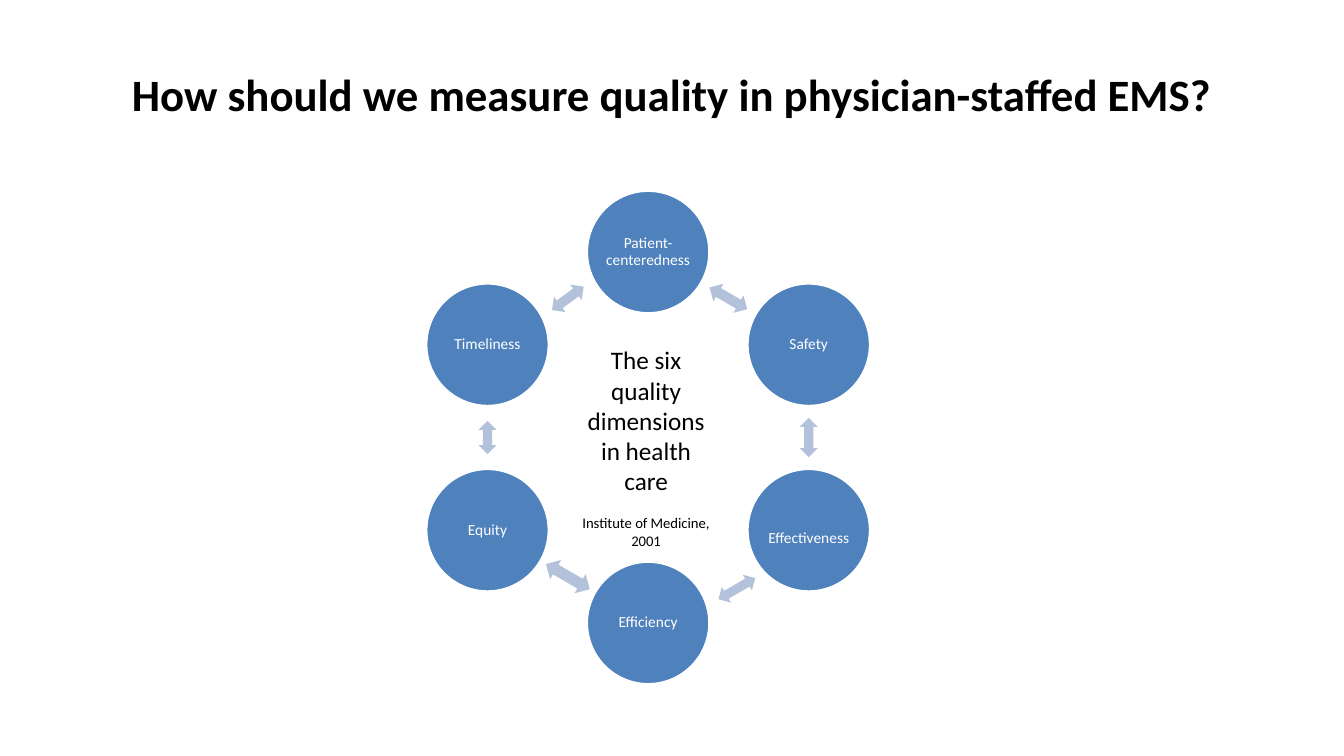
from math import cos, radians, sin

from pptx import Presentation
from pptx.dml.color import RGBColor
from pptx.enum.shapes import MSO_SHAPE
from pptx.enum.text import MSO_ANCHOR, PP_ALIGN
from pptx.util import Inches, Pt

CENTER = PP_ALIGN.CENTER
MIDDLE, TOP = MSO_ANCHOR.MIDDLE, MSO_ANCHOR.TOP
CIRCLE, ARROW = MSO_SHAPE.OVAL, MSO_SHAPE.LEFT_RIGHT_ARROW

THEME = {
    "font": "Calibri",
    "text": RGBColor(0, 0, 0),
    "light": RGBColor(255, 255, 255),
    "circle": RGBColor(0x4F, 0x81, 0xBD),
    "arrow": RGBColor(0xB3, 0xC1, 0xDB),
    "title_size": Pt(32),
    "center_size": Pt(18),
    "source_size": Pt(10.5),
    "label_size": Pt(11),
}

presentation = Presentation()
presentation.slide_width = Inches(40 / 3)
presentation.slide_height = Inches(7.5)
slide = presentation.slides.add_slide(presentation.slide_layouts[6])

# Square grid: 40 columns by 22.5 rows
UNIT = presentation.slide_width / 40


def grid(*lengths):
    return [round(length * UNIT) for length in lengths]


def write(paragraph, text, size, color, bold=False):
    paragraph.alignment = CENTER
    run = paragraph.add_run()
    run.text = text
    run.font.name = THEME["font"]
    run.font.size = size
    run.font.bold = bold
    run.font.color.rgb = color


# Title
title = slide.shapes.add_textbox(*grid(2, 0.9, 36, 3.75)).text_frame
title.word_wrap = True
title.vertical_anchor = MIDDLE
write(title.paragraphs[0], "How should we measure quality in physician-staffed EMS?",
      THEME["title_size"], THEME["text"], bold=True)

# Ring of six dimensions, clockwise from the top
RING_X, RING_Y, RING_RADIUS, DIAMETER = 19.29, 13.02, 5.52, 3.66
ARROW_RADIUS = RING_RADIUS * cos(radians(30))
STEP = 60

# Label, label drop, then the following arrow: length, thickness, turn, shift
dimensions = [
    ("Patient-centeredness", 0, 1.29, 0.6, 30, (0, 0)),
    ("Safety", 0, 1.17, 0.54, 90, (0, 0)),
    ("Effectiveness", 0.24, 1.26, 0.54, 150, (0.25, 0.36)),
    ("Efficiency", 0, 1.5, 0.66, 210, (0, 0)),
    ("Equity", 0, 0.99, 0.54, 270, (0, 0)),
    ("Timeliness", 0, 1.17, 0.57, 323.6, (0, 0)),
]

for index, (label, drop, length, thickness, turn, shift) in enumerate(dimensions):
    # Circle with its label
    angle = radians(index * STEP - 90)
    left = RING_X + RING_RADIUS * cos(angle) - DIAMETER / 2
    top = RING_Y + RING_RADIUS * sin(angle) - DIAMETER / 2
    circle = slide.shapes.add_shape(CIRCLE, *grid(left, top, DIAMETER, DIAMETER))
    circle.shadow.inherit = False
    circle.fill.solid()
    circle.fill.fore_color.rgb = THEME["circle"]
    circle.line.color.rgb = THEME["light"]
    circle.line.width = Pt(2)
    frame = circle.text_frame
    frame.word_wrap = True
    frame.vertical_anchor = MIDDLE
    frame.margin_left = frame.margin_right = frame.margin_bottom = 0
    frame.margin_top = grid(2 * drop)[0]
    frame.paragraphs[0].line_spacing = 0.9
    write(frame.paragraphs[0], label, THEME["label_size"], THEME["light"])

    # Arrow to the next circle
    angle += radians(STEP / 2)
    left = RING_X + ARROW_RADIUS * cos(angle) + shift[0] - length / 2
    top = RING_Y + ARROW_RADIUS * sin(angle) + shift[1] - thickness / 2
    arrow = slide.shapes.add_shape(ARROW, *grid(left, top, length, thickness))
    arrow.rotation = turn
    arrow.shadow.inherit = False
    arrow.fill.solid()
    arrow.fill.fore_color.rgb = THEME["arrow"]
    arrow.line.fill.background()

# Text inside the ring
center = slide.shapes.add_textbox(*grid(16.98, 10.11, 4.5, 7.35)).text_frame
center.word_wrap = True
center.vertical_anchor = TOP
write(center.paragraphs[0], "The six quality dimensions in health care",
      THEME["center_size"], THEME["text"])
source = center.add_paragraph()
source.space_before = Pt(13)
write(source, "Institute of Medicine, 2001", THEME["source_size"], THEME["text"])

presentation.save("out.pptx")
